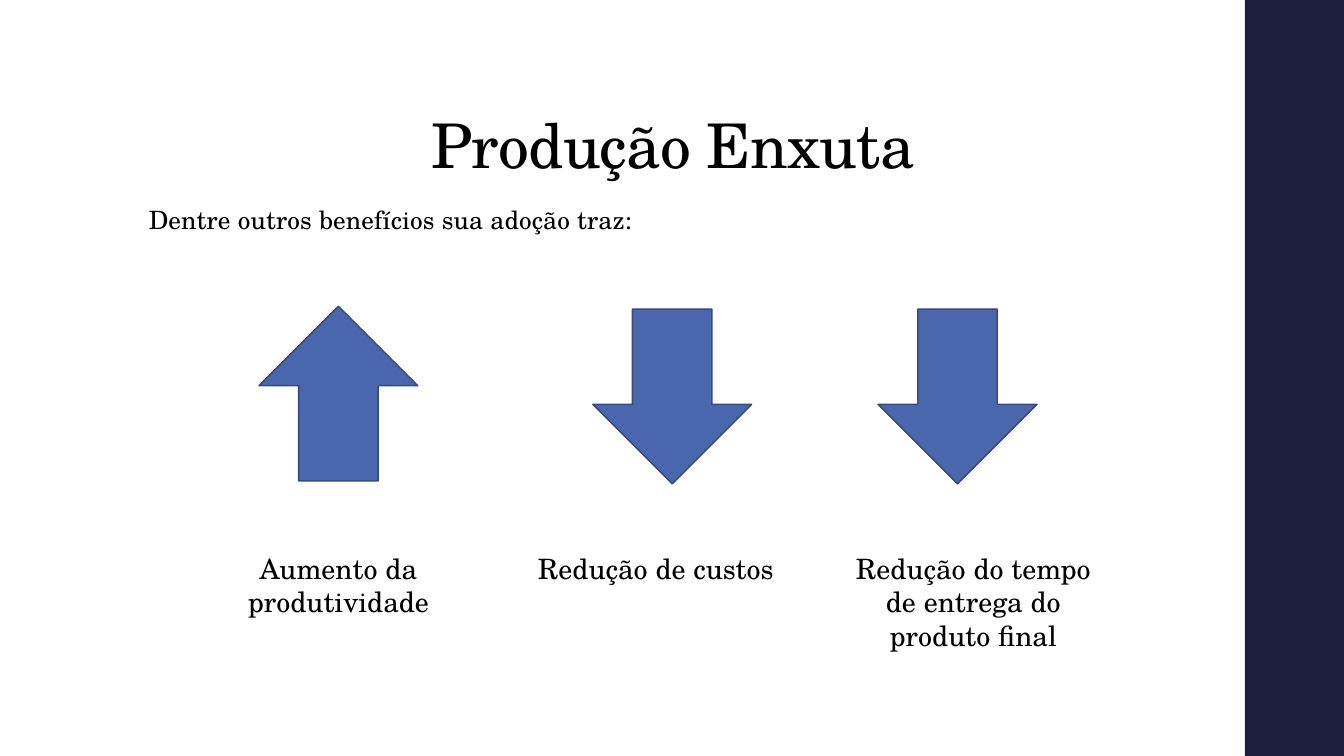
import pptx
import pptx.dml.color
import pptx.enum.shapes
import pptx.enum.text
import pptx.util

Cm = pptx.util.Cm
Pt = pptx.util.Pt
Align = pptx.enum.text.PP_ALIGN
Anchor = pptx.enum.text.MSO_ANCHOR
Shape = pptx.enum.shapes.MSO_SHAPE
RGBColor = pptx.dml.color.RGBColor

NAVY = RGBColor(0x1B, 0x1E, 0x3E)
BLUE = RGBColor(0x4A, 0x66, 0xAC)
DARK_BLUE = RGBColor(0x37, 0x4B, 0x7F)
BLACK = RGBColor(0, 0, 0)


class BenefitSlide:
    """Draw styled text and shapes on one slide."""

    font = "TeX Gyre Schola"

    def __init__(self, deck):
        self.page = deck.slides.add_slide(deck.slide_layouts[6])

    def shape(self, kind, left, top, width, height, fill, line=None, rotation=0):
        shape = self.page.shapes.add_shape(
            kind, Cm(left), Cm(top), Cm(width), Cm(height))
        shape.shadow.inherit = False
        shape.rotation = rotation
        shape.fill.solid()
        shape.fill.fore_color.rgb = fill
        if line is None:
            shape.line.fill.background()
        else:
            shape.line.color.rgb = line
            shape.line.width = Pt(1.1)

    def text(self, words, left, top, width, height, size,
             align=Align.CENTER, anchor=Anchor.TOP, tracking=0):
        box = self.page.shapes.add_textbox(
            Cm(left), Cm(top), Cm(width), Cm(height))
        frame = box.text_frame
        frame.word_wrap = True
        frame.vertical_anchor = anchor
        para = frame.paragraphs[0]
        para.alignment = align
        span = para.add_run()
        span.text = words
        span.font.name = self.font
        span.font.size = Pt(size)
        span.font.color.rgb = BLACK
        if tracking:
            span.font._element.set("spc", str(tracking))
        return para


def main():
    deck = pptx.Presentation()
    deck.slide_width = Cm(33.87)
    deck.slide_height = Cm(19.05)
    slide = BenefitSlide(deck)

    slide.shape(Shape.RECTANGLE, 31.37, 0, 2.5, 19.05, NAVY)
    title = slide.text("Produção Enxuta", 3.5, 1.02, 26.92, 3.68, 44,
                       anchor=Anchor.BOTTOM, tracking=-50)
    title.line_spacing = 0.9
    intro = slide.text("Dentre outros benefícios sua adoção traz:",
                       3.5, 5.08, 23.88, 12.09, 18,
                       align=Align.JUSTIFY, tracking=10)
    intro.line_spacing = 0.95
    intro.space_before = Pt(14)
    intro.space_after = Pt(2)

    benefits = [
        ("Aumento da produtividade", 6.53, 7.72, 0, 5.13, 1.96),
        ("Redução de custos", 14.94, 7.79, 180, 13.13, 1.11),
        ("Redução do tempo de entrega do produto final",
         22.13, 7.79, 180, 21.13, 2.81),
    ]
    for words, arrow_left, arrow_top, rotation, text_left, height in benefits:
        slide.shape(Shape.UP_ARROW, arrow_left, arrow_top, 4, 4.4,
                    BLUE, DARK_BLUE, rotation)
        slide.text(words, text_left, 13.76, 6.8, height, 20)

    deck.save("out.pptx")


if __name__ == "__main__":
    main()
